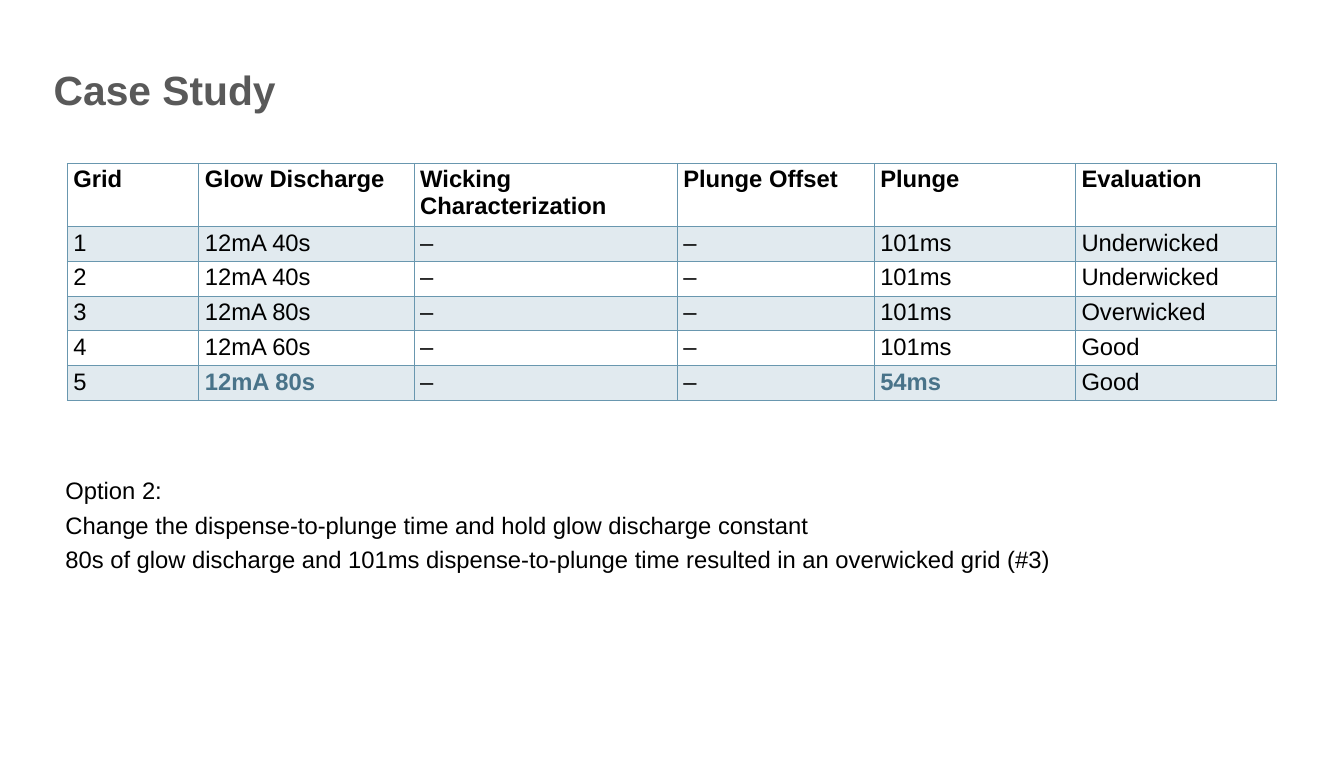
from lxml import etree
from pptx import Presentation
from pptx.dml.color import RGBColor
from pptx.enum import text
from pptx.oxml import ns
from pptx.util import Inches, Pt

BLACK = RGBColor(0x00, 0x00, 0x00)
GREY = RGBColor(0x59, 0x59, 0x59)
BLUE = RGBColor(0x69, 0x97, 0xAF)
ACCENT = RGBColor(0x49, 0x73, 0x89)

COLUMN_WIDTHS = [2.15, 3.52, 4.3, 3.22, 3.29, 3.29]
HEADER_HEIGHT = 0.97
ROW_HEIGHT = 0.53
HEADINGS = ["Grid", "Glow Discharge", "Wicking Characterization",
            "Plunge Offset", "Plunge", "Evaluation"]
TRIALS = [
    ("12mA 40s", "101ms", "Underwicked"),
    ("12mA 40s", "101ms", "Underwicked"),
    ("12mA 80s", "101ms", "Overwicked"),
    ("12mA 60s", "101ms", "Good"),
    ("12mA 80s", "54ms", "Good"),
]
CHANGED_CELLS = {(5, 1), (5, 4)}
NOTES = [
    "Option 2:",
    "Change the dispense-to-plunge time and hold glow discharge constant",
    "80s of glow discharge and 101ms dispense-to-plunge time resulted in an overwicked grid (#3)",
]


def write_span(para, words, size=28, color=BLACK, bold=False):
    span = para.add_run()
    span.text = words
    formats = {"name": "Arial", "size": Pt(size), "bold": bold}
    for name, value in formats.items():
        setattr(span.font, name, value)
    span.font.color.rgb = color


def add_text_box(page, left, top, width, height, **formats):
    box = page.shapes.add_textbox(Inches(left), Inches(top), Inches(width), Inches(height))
    frame = box.text_frame
    for name, value in {"word_wrap": True, **formats}.items():
        setattr(frame, name, value)
    return frame


def add_title(page):
    frame = add_text_box(page, 0.78, 0.8, 14.53, 1.11,
                         vertical_anchor=text.MSO_ANCHOR.BOTTOM)
    para = frame.paragraphs[0]
    para.line_spacing = 0.9
    write_span(para, "Case Study", 48, GREY, True)


def add_notes(page):
    frame = add_text_box(page, 0.87, 7.68, 20.24, 2.76,
                         margin_left=Inches(0.2), margin_right=Inches(0.2),
                         margin_top=Inches(0.1), margin_bottom=Inches(0.1))
    for index, words in enumerate(NOTES):
        para = frame.add_paragraph() if index else frame.paragraphs[0]
        if index:
            para.space_before = Pt(7)
        write_span(para, words)


def draw_borders(cell, bottom_width):
    properties = cell._tc.get_or_add_tcPr()
    widths = {"a:lnL": 1, "a:lnR": 1, "a:lnT": 1, "a:lnB": bottom_width}
    for tag, width in widths.items():
        line = etree.SubElement(properties, ns.qn(tag), w=str(Pt(width)))
        fill = etree.SubElement(line, ns.qn("a:solidFill"))
        etree.SubElement(fill, ns.qn("a:srgbClr"), val=str(BLUE))


def shade(cell, opacity):
    cell.fill.solid()
    cell.fill.fore_color.rgb = BLUE
    color = cell._tc.tcPr.find(ns.qn("a:solidFill")).find(ns.qn("a:srgbClr"))
    etree.SubElement(color, ns.qn("a:alpha"), val=str(opacity * 1000))


def add_trial_table(page):
    rows = [HEADINGS] + [
        [str(number), glow, "–", "–", plunge, evaluation]
        for number, (glow, plunge, evaluation) in enumerate(TRIALS, 1)
    ]
    heights = [HEADER_HEIGHT] + [ROW_HEIGHT] * len(TRIALS)
    table = page.shapes.add_table(
        len(rows), len(HEADINGS), Inches(1.1), Inches(2.67),
        Inches(sum(COLUMN_WIDTHS)), Inches(sum(heights))).table
    table.horz_banding = False
    for column, width in zip(table.columns, COLUMN_WIDTHS):
        column.width = Inches(width)
    for row, height in zip(table.rows, heights):
        row.height = Inches(height)

    for row_index, row in enumerate(rows):
        is_header = row_index == 0
        for column_index, words in enumerate(row):
            cell = table.cell(row_index, column_index)
            changed = (row_index, column_index) in CHANGED_CELLS
            write_span(cell.text_frame.paragraphs[0], words,
                       color=ACCENT if changed else BLACK,
                       bold=is_header or changed)
            draw_borders(cell, 2 if is_header else 1)
            if row_index % 2:
                shade(cell, 20)
            else:
                cell.fill.background()


def main():
    deck = Presentation()
    deck.slide_width = Inches(21.97)
    deck.slide_height = Inches(12.37)
    page = deck.slides.add_slide(deck.slide_layouts[6])
    add_title(page)
    add_trial_table(page)
    add_notes(page)
    deck.save("out.pptx")


if __name__ == "__main__":
    main()
